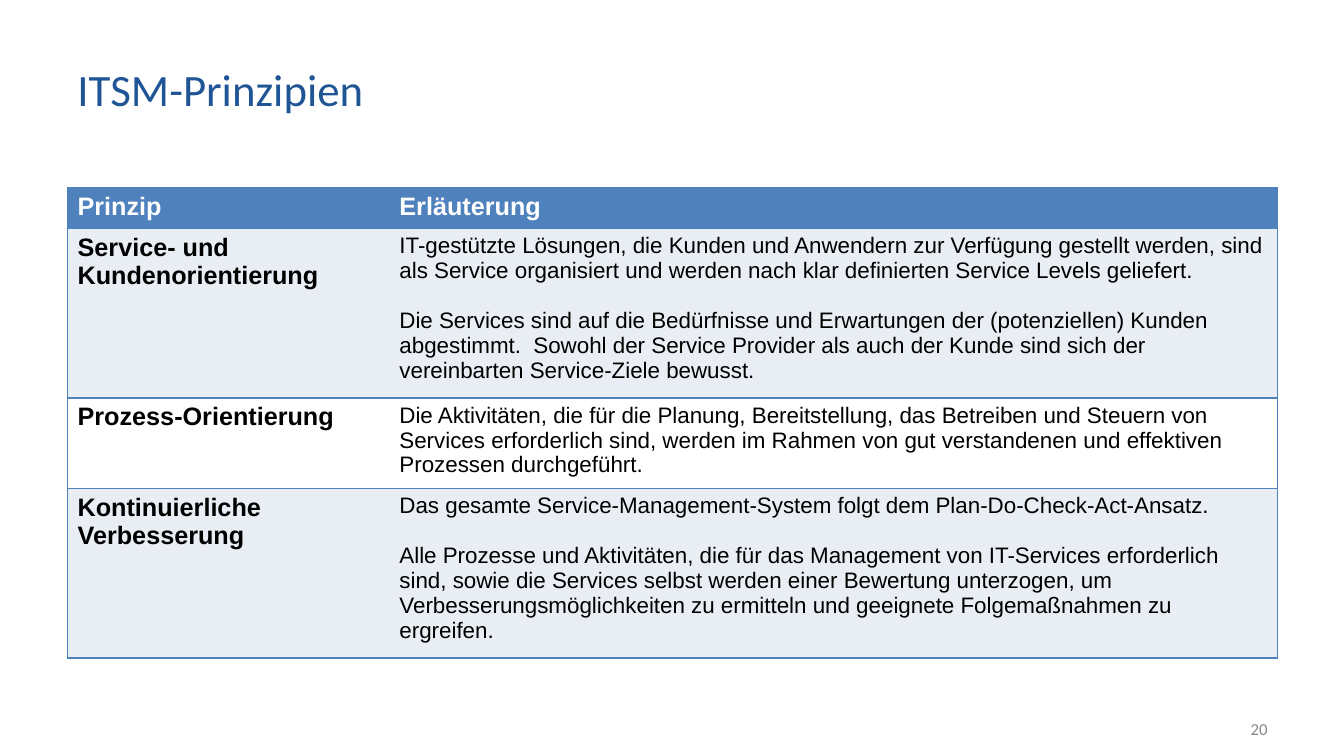
from dataclasses import dataclass

from lxml.etree import SubElement
from pptx import Presentation
from pptx.dml.color import RGBColor as Rgb
from pptx.enum.text import MSO_ANCHOR as Anchor, PP_ALIGN as Align
from pptx.oxml.ns import qn
from pptx.util import Inches, Pt


@dataclass(frozen=True)
class Theme:
    heading_font: str = "Calibri"
    table_font: str = "Arial"
    title_size: int = 32
    label_size: int = 18
    body_size: int = 16
    number_size: int = 12
    paragraph_gap: float = 17.7
    title: str = "205595"
    accent: str = "4F81BD"
    band: str = "E9EDF4"
    white: str = "FFFFFF"
    black: str = "000000"
    muted: str = "888888"


THEME = Theme()
WIDTH, HEIGHT = 13.33, 7.5
MARGIN = 0.67
CONTENT_WIDTH = 12
COLUMN_SHARES = (0.266, 0.734)
TABLE_TOP = 1.86
HEADER_HEIGHT = 0.41
LINE_HEIGHT = 0.246
CELL_PADDING = 0.1

HEADERS = ("Prinzip", "Erläuterung")
PRINCIPLES = (
    ("Service- und Kundenorientierung", 6, (
        "IT-gestützte Lösungen, die Kunden und Anwendern zur Verfügung gestellt werden, "
        "sind als Service organisiert und werden nach klar definierten Service Levels geliefert.",
        "Die Services sind auf die Bedürfnisse und Erwartungen der (potenziellen) Kunden "
        "abgestimmt.  Sowohl der Service Provider als auch der Kunde sind sich der "
        "vereinbarten Service-Ziele bewusst.")),
    ("Prozess-Orientierung", 3, (
        "Die Aktivitäten, die für die Planung, Bereitstellung, das Betreiben und Steuern von "
        "Services erforderlich sind, werden im Rahmen von gut verstandenen und effektiven "
        "Prozessen durchgeführt.",)),
    ("Kontinuierliche Verbesserung", 6, (
        "Das gesamte Service-Management-System folgt dem Plan-Do-Check-Act-Ansatz.",
        "Alle Prozesse und Aktivitäten, die für das Management von IT-Services erforderlich "
        "sind, sowie die Services selbst werden einer Bewertung unterzogen, um "
        "Verbesserungsmöglichkeiten zu ermitteln und geeignete Folgemaßnahmen zu ergreifen.")),
)


def write(frame, paragraphs, font_name, size, color, bold=False, align=Align.LEFT):
    frame.word_wrap = True
    frame.text = "\n".join(paragraphs)
    for index, paragraph in enumerate(frame.paragraphs):
        paragraph.alignment = align
        if index:
            paragraph.space_before = Pt(THEME.paragraph_gap)
        for run in paragraph.runs:
            run.font.name = font_name
            run.font.size = Pt(size)
            run.font.bold = bold
            run.font.color.rgb = Rgb.from_string(color)


def add_label(slide, box, text, size, color, align=Align.LEFT):
    label = slide.shapes.add_textbox(*map(Inches, box))
    label.text_frame.vertical_anchor = Anchor.MIDDLE
    write(label.text_frame, [text], THEME.heading_font, size, color, align=align)


def set_borders(cell, sides):
    properties = cell._tc.get_or_add_tcPr()
    for side in "LRTB":
        line = SubElement(properties, qn(f"a:ln{side}"), w=str(Pt(1)))
        if side in sides:
            fill = SubElement(line, qn("a:solidFill"))
            SubElement(fill, qn("a:srgbClr"), val=THEME.accent)
        else:
            SubElement(line, qn("a:noFill"))


def fill_row(table, index, contents, sizes, bolds, fill, color):
    columns = zip(table.rows[index].cells, contents, sizes, bolds, ("LTB", "RTB"))
    for cell, paragraphs, size, bold, sides in columns:
        set_borders(cell, sides)
        cell.fill.solid()
        cell.fill.fore_color.rgb = Rgb.from_string(fill)
        write(cell.text_frame, paragraphs, THEME.table_font, size, color, bold)


def add_principles(slide):
    heights = [HEADER_HEIGHT] + [lines * LINE_HEIGHT + CELL_PADDING for _, lines, _ in PRINCIPLES]
    box = (MARGIN, TABLE_TOP, CONTENT_WIDTH, sum(heights))
    table = slide.shapes.add_table(len(heights), len(HEADERS), *map(Inches, box)).table
    for column, share in zip(table.columns, COLUMN_SHARES):
        column.width = Inches(CONTENT_WIDTH * share)
    for row, height in zip(table.rows, heights):
        row.height = Inches(height)
    fill_row(table, 0, [[header] for header in HEADERS], (THEME.label_size,) * 2,
             (True, True), THEME.accent, THEME.white)
    for index, (name, _, explanation) in enumerate(PRINCIPLES, start=1):
        fill_row(table, index, ([name], explanation), (THEME.label_size, THEME.body_size),
                 (True, False), THEME.band if index % 2 else THEME.white, THEME.black)


def main():
    deck = Presentation()
    deck.slide_width, deck.slide_height = Inches(WIDTH), Inches(HEIGHT)
    slide = deck.slides.add_slide(deck.slide_layouts[6])
    add_label(slide, (MARGIN, HEIGHT * 0.04, 9.91, 1.15), "ITSM-Prinzipien",
              THEME.title_size, THEME.title)
    add_principles(slide)
    number_width = 3.11
    add_label(slide, (MARGIN + CONTENT_WIDTH - number_width, 7.03, number_width, 0.4), "20",
              THEME.number_size, THEME.muted, Align.RIGHT)
    deck.save("out.pptx")


if __name__ == "__main__":
    main()
